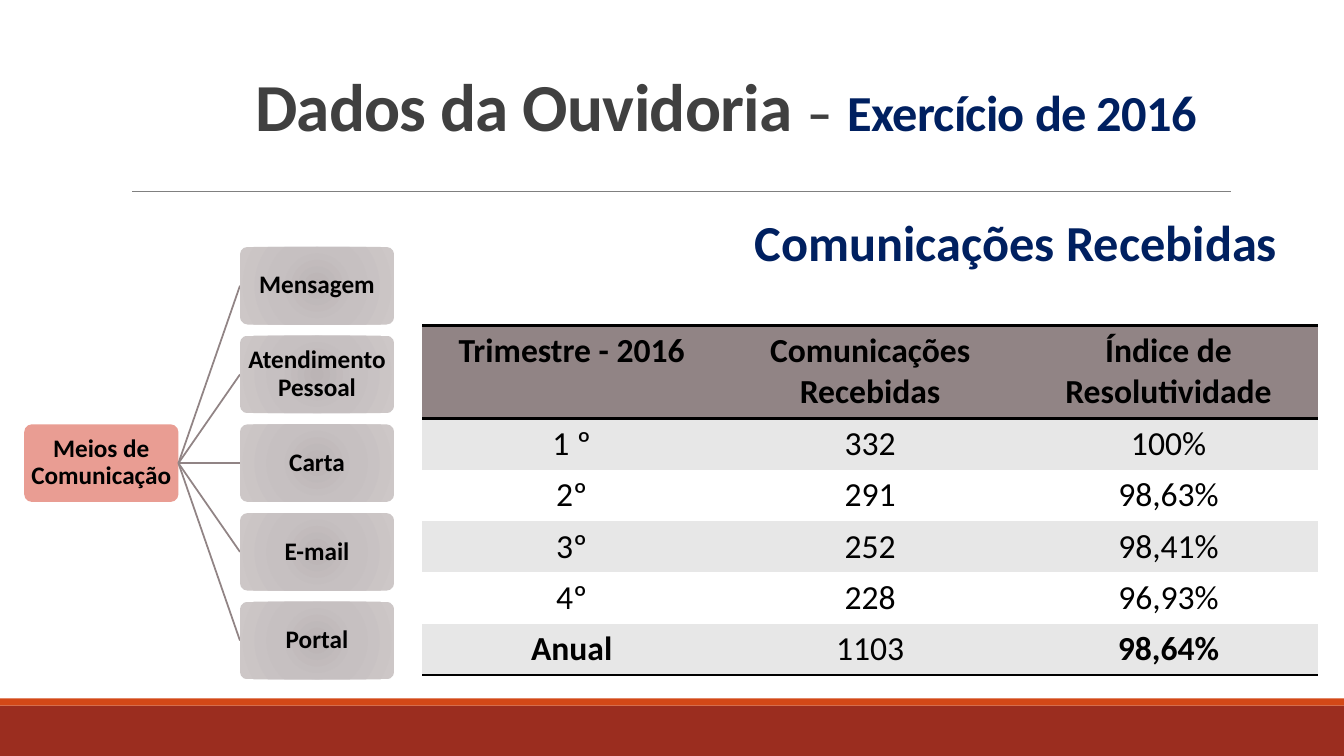
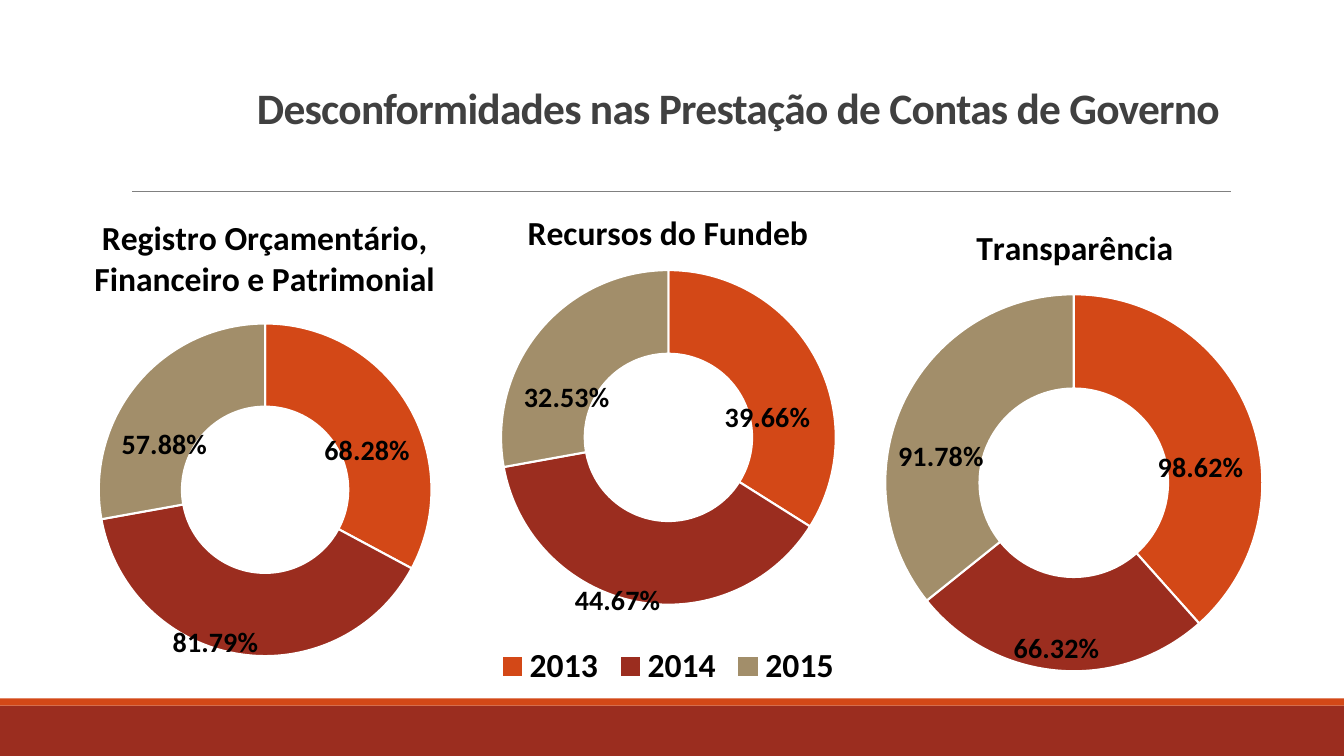
from pptx import Presentation
from pptx.chart.data import CategoryChartData
from pptx.dml.color import RGBColor
from pptx.enum.chart import XL_CHART_TYPE as ChartType, XL_LEGEND_POSITION as LegendPos
from pptx.enum.shapes import MSO_CONNECTOR as Connector, MSO_SHAPE as Shape
from pptx.enum.text import MSO_ANCHOR as Anchor, MSO_AUTO_SIZE as AutoSize, PP_ALIGN as Align
from pptx.oxml import parse_xml
from pptx.oxml.ns import nsdecls, qn
from pptx.util import Inches, Pt

FONT = "Calibri"
BLACK, WHITE, GRAY, NAVY = "000000", "FFFFFF", "404040", "002060"
ORANGE, BRICK, SAND = "D34817", "9B2D1F", "A28E6A"
TAUPE, SALMON, STRIPE, RULE = "918485", "E99D93", "E7E7E7", "808080"
BOX_STOPS = [(0, "BBB4B5"), (45, "C6C0C1"), (100, "CDC7C7")]

OMBUDSMAN_TITLE = [
    ("Dados da Ouvidoria ", 48, GRAY),
    ("–", 36, GRAY),
    (" ", 48, GRAY),
    ("Exercício de 2016", 36, NAVY),
]
RECEIVED = "Comunicações Recebidas"
SOURCE = "Meios de Comunicação"
CHANNELS = ["Mensagem", "Atendimento Pessoal", "Carta", "E-mail", "Portal"]
QUARTERS = [
    ("Trimestre - 2016", "Comunicações Recebidas", "Índice de Resolutividade"),
    ("1 º", "332", "100%"),
    ("2º", "291", "98,63%"),
    ("3º", "252", "98,41%"),
    ("4º", "228", "96,93%"),
    ("Anual", "1103", "98,64%"),
]
BOLD_TOTALS = ("Anual", "98,64%")

ACCOUNTS_TITLE = [("Desconformidades nas Prestação de Contas de Governo", 31, GRAY)]
YEARS = {"2013": ORANGE, "2014": BRICK, "2015": SAND}
DOUGHNUTS = [
    {"title": "Registro Orçamentário, Financeiro e Patrimonial",
     "rates": (0.6828, 0.8179, 0.5788), "frame": (0.14, 1.92, 4.97, 4.87),
     "center": (2.63, 4.86), "radius": 1.65, "legend": False,
     "shifts": [(-0.01, 0.05), (-0.06, 0.06), (-0.01, 0.07)]},
    {"title": "Recursos do Fundeb",
     "rates": (0.3966, 0.4467, 0.3253), "frame": (3.96, 1.87, 5.33, 5.01),
     "center": (6.63, 4.34), "radius": 1.66, "legend": True,
     "shifts": [(-0.02, 0.08), (-0.05, 0.08), (-0.01, 0.08)]},
    {"title": "Transparência",
     "rates": (0.9862, 0.6632, 0.9178), "frame": (7.99, 2.02, 5.34, 4.91),
     "center": (10.65, 4.79), "radius": 1.87, "legend": False,
     "shifts": [(-0.01, 0.07), (-0.01, 0.05), (-0.01, 0.07)]},
]


def rgb(color):
    return RGBColor.from_string(color)


def inches(*lengths):
    return [Inches(length) for length in lengths]


def assign(target, **values):
    for name, value in values.items():
        setattr(target, name, value)


def style(font, size, color=BLACK, bold=True):
    assign(font, name=FONT, size=Pt(size), bold=bold)
    font.color.rgb = rgb(color)


def move(part, frame):
    assign(part, **dict(zip(("left", "top", "width", "height"), inches(*frame))))


def box(slide, kind, frame, color):
    panel = slide.shapes.add_shape(kind, *inches(*frame))
    panel.shadow.inherit = False
    panel.fill.solid()
    panel.fill.fore_color.rgb = rgb(color)
    panel.line.fill.background()
    return panel


def rule(slide, start, end, color, width):
    stroke = slide.shapes.add_connector(Connector.STRAIGHT, *inches(*start, *end))
    stroke.line.color.rgb = rgb(color)
    stroke.line.width = Pt(width)
    stroke.element.spPr.append(parse_xml(f"<a:effectLst {nsdecls('a')}/>"))
    return stroke


def dress_master(deck, slide):
    decor = [
        box(slide, Shape.RECTANGLE, (0, 7, 13.33, 0.5), BRICK),
        box(slide, Shape.RECTANGLE, (0, 6.93, 13.33, 0.07), ORANGE),
        rule(slide, (1.31, 1.9), (12.21, 1.9), RULE, 0.5),
    ]
    tree = deck.slide_master.shapes.element
    for order, part in enumerate(decor):
        part.element.xpath(".//p:cNvPr")[0].set("id", str(100 + order))
        tree.insert(2 + order, part.element)


def write_title(slide, runs, align, indent=0.1):
    title = slide.shapes.title
    move(title, (1.2, 0.31, 11, 1.59))
    assign(title.text_frame, word_wrap=True, auto_size=AutoSize.NONE,
           vertical_anchor=Anchor.MIDDLE, margin_left=Inches(indent))
    heading = title.text_frame.paragraphs[0]
    assign(heading, alignment=align, line_spacing=0.85)
    for words, size, color in runs:
        run = heading.add_run()
        run.text = words
        style(run.font, size, color)
        run.font._element.set("spc", "-50")


def write_received(slide):
    body = slide.placeholders[1]
    move(body, (0.47, 2.11, 12.2, 0.8))
    assign(body.text_frame, word_wrap=True, auto_size=AutoSize.NONE, vertical_anchor=Anchor.TOP,
           margin_left=0, margin_right=0, text=RECEIVED)
    line = body.text_frame.paragraphs[0]
    assign(line, alignment=Align.RIGHT, line_spacing=0.9, space_before=Pt(0))
    props = line._p.get_or_add_pPr()
    props.set("marL", "0")
    props.set("indent", "0")
    props.append(parse_xml(f"<a:buNone {nsdecls('a')}/>"))
    style(line.runs[0].font, 36, NAVY)


def diagram_box(slide, words, left, top, width, height):
    node = box(slide, Shape.ROUNDED_RECTANGLE, (left, top, width, height), SALMON)
    node.adjustments[0] = 0.1
    assign(node.text_frame, word_wrap=True, vertical_anchor=Anchor.MIDDLE, text=words,
           **{f"margin_{side}": Inches(0.03) for side in ("left", "top", "right", "bottom")})
    label = node.text_frame.paragraphs[0]
    assign(label, alignment=Align.CENTER, line_spacing=0.9)
    style(label.runs[0].font, 18)
    return node


def shade(node):
    stops = "".join(f'<a:gs pos="{pos * 1000}"><a:srgbClr val="{color}"/></a:gs>'
                    for pos, color in BOX_STOPS)
    solid = node.element.spPr.find(qn("a:solidFill"))
    solid.addprevious(parse_xml(
        f'<a:gradFill {nsdecls("a")} rotWithShape="1"><a:gsLst>{stops}</a:gsLst>'
        '<a:path path="circle"><a:fillToRect l="50000" t="50000" r="50000" b="50000"/>'
        '</a:path></a:gradFill>'))
    node.element.spPr.remove(solid)


def draw_channels(slide):
    width, height, pitch = 1.53, 0.77, 0.88
    source_left, channel_left, first_top = 0.24, 2.38, 2.45
    source_top = first_top + pitch * (len(CHANNELS) - 1) / 2
    hub = (source_left + width, source_top + height / 2)
    diagram_box(slide, SOURCE, source_left, source_top, width, height)
    for row, channel in enumerate(CHANNELS):
        top = first_top + row * pitch
        rule(slide, hub, (channel_left, top + height / 2), TAUPE, 1.25)
        shade(diagram_box(slide, channel, channel_left, top, width, height))


def border(cell, sides):
    props = cell._tc.get_or_add_tcPr()
    for order, side in enumerate(sides):
        props.insert(order, parse_xml(
            f'<a:ln{side} {nsdecls("a")} w="25400"><a:solidFill><a:srgbClr val="{BLACK}"/>'
            f'</a:solidFill></a:ln{side}>'))


def draw_quarters(slide):
    frame = inches(4.19, 3.23, 8.88, 3.47)
    table = slide.shapes.add_table(len(QUARTERS), len(QUARTERS[0]), *frame).table
    table._tbl.tblPr.find(qn("a:tableStyleId")).text = "{2D5ABB26-0587-4C30-8999-92F81FD0307C}"
    for column in table.columns:
        column.width = Inches(2.96)
    for r, values in enumerate(QUARTERS):
        header, total = r == 0, r == len(QUARTERS) - 1
        table.rows[r].height = Inches(0.92 if header else 0.51)
        for c, value in enumerate(values):
            cell = table.cell(r, c)
            cell.text = value
            cell.fill.solid()
            cell.fill.fore_color.rgb = rgb(TAUPE if header else STRIPE if r % 2 else WHITE)
            entry = cell.text_frame.paragraphs[0]
            entry.alignment = Align.CENTER
            style(entry.runs[0].font, 24, bold=header or value in BOLD_TOTALS)
            border(cell, "TB" if header else "B" if total else "")


def manual_layout(**values):
    items = "".join(f'<c:{name} val="{value}"/>' for name, value in values.items())
    return parse_xml(f"<c:layout {nsdecls('c')}><c:manualLayout>{items}</c:manualLayout></c:layout>")


def draw_doughnut(slide, spec_data):
    data = CategoryChartData(number_format="0.00%")
    data.categories = list(YEARS)
    data.add_series("Series 1", spec_data["rates"])
    left, top, width, height = spec_data["frame"]
    chart = slide.shapes.add_chart(
        ChartType.DOUGHNUT, *inches(left, top, width, height), data).chart
    style(chart.font, 18)
    space = chart._chartSpace
    space.find(qn("c:txPr")).addprevious(parse_xml(
        f"<c:spPr {nsdecls('c', 'a')}><a:noFill/><a:ln><a:noFill/></a:ln></c:spPr>"))

    chart.has_title = True
    chart.chart_title.include_in_layout = False
    chart.chart_title.text_frame.text = spec_data["title"]
    style(chart.chart_title.text_frame.paragraphs[0].runs[0].font, 24)
    chart.has_legend = spec_data["legend"]
    if chart.has_legend:
        assign(chart.legend, position=LegendPos.BOTTOM, include_in_layout=False)
        style(chart.legend.font, 24)

    plot = chart.plots[0]
    plot.vary_by_categories = True
    for year, color in enumerate(YEARS.values()):
        slice_ = plot.series[0].points[year]
        slice_.format.fill.solid()
        slice_.format.fill.fore_color.rgb = rgb(color)
        slice_.format.line.color.rgb = rgb(WHITE)
        slice_.format.line.width = Pt(1.5)
        style(slice_.data_label.font, 20)
    for label, (dx, dy) in zip(space.iter(qn("c:dLbl")), spec_data["shifts"]):
        label.find(qn("c:idx")).addnext(manual_layout(x=dx, y=dy))

    (cx, cy), radius = spec_data["center"], spec_data["radius"]
    area = next(space.iter(qn("c:plotArea")))
    for old in area.findall(qn("c:layout")):
        area.remove(old)
    area.insert(0, manual_layout(
        layoutTarget="inner", xMode="edge", yMode="edge",
        x=(cx - radius - left) / width, y=(cy - radius - top) / height,
        w=2 * radius / width, h=2 * radius / height))


def main():
    deck = Presentation()
    assign(deck, slide_width=Inches(13.33), slide_height=Inches(7.5))

    ombudsman = deck.slides.add_slide(deck.slide_layouts[1])
    dress_master(deck, ombudsman)
    write_title(ombudsman, OMBUDSMAN_TITLE, Align.CENTER, indent=1.1)
    write_received(ombudsman)
    draw_quarters(ombudsman)
    draw_channels(ombudsman)

    accounts = deck.slides.add_slide(deck.slide_layouts[5])
    write_title(accounts, ACCOUNTS_TITLE, Align.RIGHT)
    for doughnut in DOUGHNUTS:
        draw_doughnut(accounts, doughnut)

    deck.save("out.pptx")


if __name__ == "__main__":
    main()
